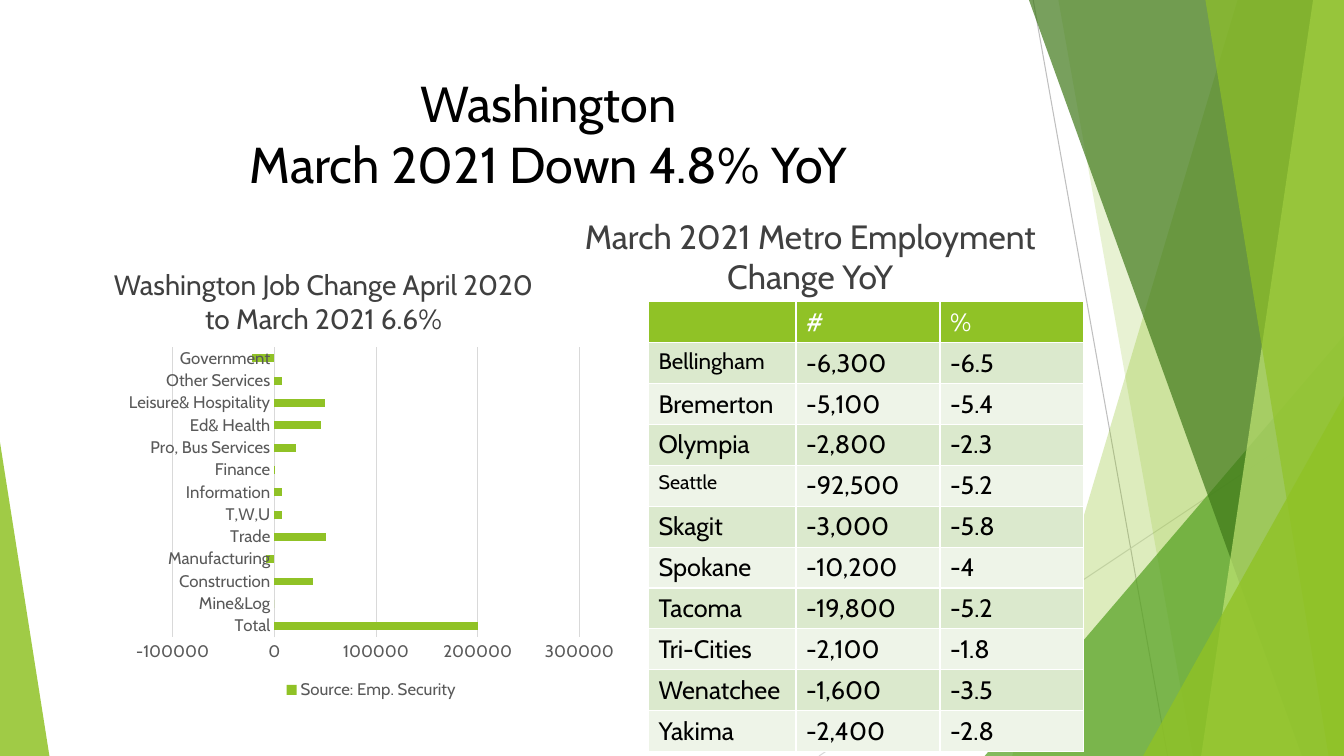
from lxml import etree
from pptx import Presentation
from pptx.chart.data import CategoryChartData
from pptx.dml.color import RGBColor
from pptx.enum.chart import XL_CHART_TYPE, XL_LEGEND_POSITION, XL_TICK_MARK
from pptx.enum.shapes import MSO_CONNECTOR, MSO_SHAPE
from pptx.enum.text import MSO_ANCHOR, PP_ALIGN
from pptx.oxml.ns import qn
from pptx.util import Pt

BAR_CLUSTERED = XL_CHART_TYPE.BAR_CLUSTERED
LEGEND_BOTTOM = XL_LEGEND_POSITION.BOTTOM
NO_TICK = XL_TICK_MARK.NONE
STRAIGHT = MSO_CONNECTOR.STRAIGHT
TRIANGLE = MSO_SHAPE.ISOSCELES_TRIANGLE
TOP, BOTTOM = MSO_ANCHOR.TOP, MSO_ANCHOR.BOTTOM
CENTER = PP_ALIGN.CENTER

WIDTH, HEIGHT = 960, 540
FONT = "Cabin"
COLORS = {
    "lime": "90C226", "green": "54A021", "forest": "3F7819", "pale": "C0E474",
    "white": "FFFFFF", "black": "000000", "heading": "404040", "label": "595959",
    "grid": "D9D9D9", "ray": "BFBFBF", "band_dark": "DBE9CD", "band_light": "EEF4E8",
}

# start x, start y, end x, end y, colour
RAYS = [(738, 0, 834, 540, "ray"), (960, 290, 585, 540, "grid")]
# x at the top, x at the bottom, colour, opacity in percent
REAR_FACETS = [(884, 723, "lime", 30), (756, 852, "lime", 20)]
FRONT_FACETS = [(735, 930, "forest", 70), (938, 858, "pale", 70), (861, 949, "lime", 65)]
# left, top, width, apex position, colour, opacity in percent
REAR_CORNER = (703.4, 239.8, 256.6, 1, "green", 72)
FRONT_CORNERS = [(816.5, 283, 143.5, 1, "lime", 80), (0, 316, 35.3, 0, "lime", 85)]

JOB_CHANGES = [
    ("Total", 200000), ("Mine&Log", 0), ("Construction", 38000),
    ("Manufacturing", -8000), ("Trade", 51000), ("T,W,U", 7000),
    ("Information", 7000), ("Finance", 1000), ("Pro, Bus Services", 21000),
    ("Ed& Health", 46000), ("Leisure& Hospitality", 50000),
    ("Other Services", 7000), ("Government", -22000),
]
METROS = [
    ("", "#", "%"),
    ("Bellingham", "-6,300", "-6.5"), ("Bremerton", "-5,100", "-5.4"),
    ("Olympia", "-2,800", "-2.3"), ("Seattle", "-92,500", "-5.2"),
    ("Skagit", "-3,000", "-5.8"), ("Spokane", "-10,200", "-4"),
    ("Tacoma", "-19,800", "-5.2"), ("Tri-Cities", "-2,100", "-1.8"),
    ("Wenatchee", "-1,600", "-3.5"), ("Yakima", "-2,400", "-2.8"),
]
METRO_SIZES = {"Bellingham": 16, "Seattle": 14}
COLUMN_WIDTHS = [105.4, 102.8, 102.8]
ROW_HEIGHT = 29.2


def rgb(color):
    return RGBColor.from_string(COLORS[color])


def style_font(font, size, color):
    font.name, font.size, font.bold = FONT, Pt(size), False
    font.color.rgb = rgb(color)


def add_run(paragraph, text, size, color):
    run = paragraph.add_run()
    run.text = text
    style_font(run.font, size, color)


def paint(shape, color, opacity):
    """Fill with a see-through colour, without outline or shadow."""
    shape.shadow.inherit = False
    shape.line.fill.background()
    shape.fill.solid()
    shape.fill.fore_color.rgb = rgb(color)
    tint = shape.fill._xPr.find(".//" + qn("a:srgbClr"))
    etree.SubElement(tint, qn("a:alpha"), val=str(opacity * 1000))


def add_ray(slide, x1, y1, x2, y2, color):
    ray = slide.shapes.add_connector(STRAIGHT, Pt(x1), Pt(y1), Pt(x2), Pt(y2))
    ray.line.color.rgb = rgb(color)
    ray.line.width = Pt(0.75)
    etree.SubElement(ray._element.spPr, qn("a:effectLst"))


def add_facet(slide, top_x, bottom_x, color, opacity):
    """Draw a slanted band that reaches the right edge of the slide."""
    outline = slide.shapes.build_freeform(Pt(top_x), 0)
    corners = [(WIDTH, 0), (WIDTH, HEIGHT), (bottom_x, HEIGHT)]
    outline.add_line_segments([(Pt(x), Pt(y)) for x, y in corners], close=True)
    paint(outline.convert_to_shape(), color, opacity)


def add_corner(slide, left, top, width, apex, color, opacity):
    """Draw a triangle that stands on the bottom edge of the slide."""
    corner = slide.shapes.add_shape(
        TRIANGLE, Pt(left), Pt(top), Pt(width), Pt(HEIGHT - top))
    corner.adjustments[0] = apex
    paint(corner, color, opacity)


def add_heading(slide, box, lines, size, color, anchor, space_before=0):
    frame = slide.shapes.add_textbox(*map(Pt, box)).text_frame
    frame.word_wrap = True
    frame.vertical_anchor = anchor
    paragraph = frame.paragraphs[0]
    paragraph.alignment = CENTER
    paragraph.space_before = Pt(space_before)
    for index, line in enumerate(lines):
        if index:
            paragraph.add_line_break()
        add_run(paragraph, line, size, color)


def add_job_chart(slide):
    data = CategoryChartData()
    data.categories = [sector for sector, _ in JOB_CHANGES]
    data.add_series("Source: Emp. Security", [change for _, change in JOB_CHANGES])
    chart = slide.shapes.add_chart(
        BAR_CLUSTERED, Pt(84.5), Pt(242.8), Pt(361.4), Pt(260), data).chart
    style_font(chart.font, 10, "black")
    chart.has_title = False
    chart.has_legend = True
    chart.legend.position = LEGEND_BOTTOM
    chart.legend.include_in_layout = False
    sectors, jobs = chart.category_axis, chart.value_axis
    for part in (chart.legend.font, sectors.tick_labels.font, jobs.tick_labels.font):
        style_font(part, 12, "label")
    for axis in (sectors, jobs):
        axis.major_tick_mark = axis.minor_tick_mark = NO_TICK
    jobs.minimum_scale, jobs.maximum_scale, jobs.major_unit = -100000, 300000, 100000
    jobs.format.line.fill.background()
    for line in (sectors.format.line, jobs.major_gridlines.format.line):
        line.color.rgb = rgb("grid")
        line.width = Pt(0.75)
    plot = chart.plots[0]
    plot.gap_width = 182
    plot.vary_by_categories = False
    bars = plot.series[0]
    bars.invert_if_negative = False
    bars.format.fill.solid()
    bars.format.fill.fore_color.rgb = rgb("lime")


def add_borders(cell):
    properties = cell._tc.get_or_add_tcPr()
    for side in "LRTB":
        border = etree.SubElement(properties, qn("a:ln" + side), w=str(Pt(1)))
        fill = etree.SubElement(border, qn("a:solidFill"))
        etree.SubElement(fill, qn("a:srgbClr"), val=COLORS["white"])


def add_metro_table(slide):
    table = slide.shapes.add_table(
        len(METROS), len(COLUMN_WIDTHS), Pt(463.2), Pt(215.6),
        Pt(sum(COLUMN_WIDTHS)), Pt(ROW_HEIGHT * len(METROS))).table
    for column, width in zip(table.columns, COLUMN_WIDTHS):
        column.width = Pt(width)
    for index, metro in enumerate(METROS):
        table.rows[index].height = Pt(ROW_HEIGHT)
        is_header = index == 0
        band = "lime" if is_header else "band_dark" if index % 2 else "band_light"
        for cell, text in zip(table.rows[index].cells, metro):
            add_borders(cell)
            cell.fill.solid()
            cell.fill.fore_color.rgb = rgb(band)
            if text:
                add_run(cell.text_frame.paragraphs[0], text,
                        METRO_SIZES.get(text, 18), "white" if is_header else "black")


def main():
    deck = Presentation()
    deck.slide_width, deck.slide_height = Pt(WIDTH), Pt(HEIGHT)
    slide = deck.slides.add_slide(deck.slide_layouts[6])
    for ray in RAYS:
        add_ray(slide, *ray)
    for facet in REAR_FACETS:
        add_facet(slide, *facet)
    add_corner(slide, *REAR_CORNER)
    for facet in FRONT_FACETS:
        add_facet(slide, *facet)
    for corner in FRONT_CORNERS:
        add_corner(slide, *corner)
    add_heading(slide, (53.3, 48, 676.8, 104), ["Washington", "March 2021 Down 4.8% YoY"],
                36, "black", TOP)
    add_heading(slide, (398, 170, 361.4, 45.4), ["March 2021 Metro Employment Change YoY"],
                24, "heading", BOTTOM, 10)
    add_heading(slide, (66.2, 197.3, 329.8, 45.4),
                ["Washington Job Change April 2020 to March 2021 6.6%"],
                20, "heading", BOTTOM, 10)
    add_job_chart(slide)
    add_metro_table(slide)
    deck.save("out.pptx")


if __name__ == "__main__":
    main()
